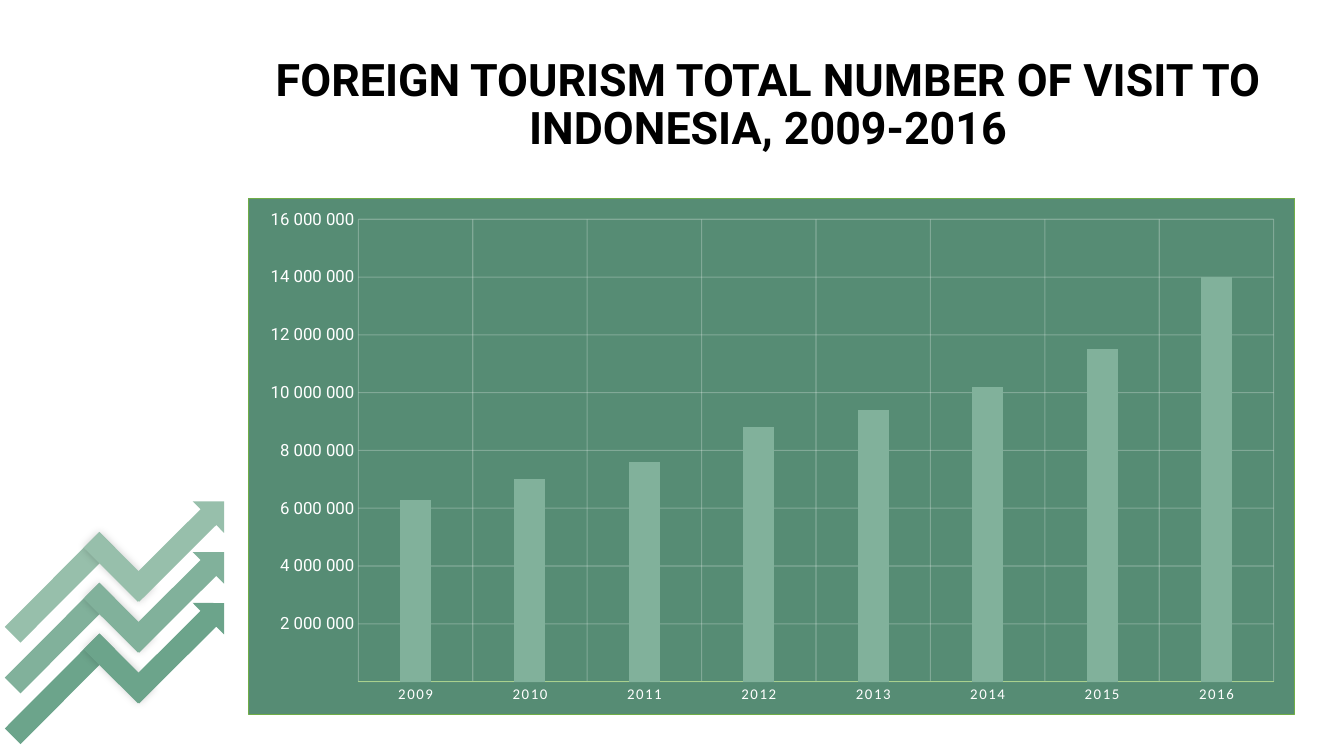
from lxml import etree
from pptx import Presentation
from pptx.chart.data import CategoryChartData
from pptx.dml.color import RGBColor
from pptx.enum.chart import XL_CHART_TYPE as ChartType, XL_TICK_MARK as Tick
from pptx.enum.shapes import MSO_SHAPE as Shape
from pptx.enum.text import MSO_ANCHOR as Anchor, MSO_AUTO_SIZE as AutoSize, PP_ALIGN as Align
from pptx.oxml import parse_xml
from pptx.oxml.ns import nsdecls, qn
from pptx.util import Cm, Pt

VISITS = {"2009": 6300000, "2010": 7000000, "2011": 7600000, "2012": 8800000,
          "2013": 9400000, "2014": 10200000, "2015": 11500000, "2016": 14000000}
ARROW_COLORS = ["6CA48B", "81B19B", "97BFAB"]  # bottom to top
ARROW_STEP = 1.28


def color(value):
    return RGBColor.from_string(value)


def shadow(blur, distance, angle, opacity):
    return parse_xml(
        f'<a:effectLst {nsdecls("a")}><a:outerShdw blurRad="{Pt(blur)}" dist="{Pt(distance)}" '
        f'dir="{angle * 60000}" algn="ctr" rotWithShape="0"><a:srgbClr val="000000">'
        f'<a:alpha val="{opacity * 1000}"/></a:srgbClr></a:outerShdw></a:effectLst>')


class SlideBuilder:
    font = "Roboto"
    panel, border, bar = "568C74", "70AD47", "81B19B"
    light, dark, axis_line = "FFFFFF", "000000", "A9D18E"

    def __init__(self, page):
        self.page = page

    def title(self, text, left, top, width, height):
        box = self.page.shapes.title
        box.left, box.top, box.width, box.height = map(Cm, (left, top, width, height))
        frame = box.text_frame
        frame.text = text
        frame.word_wrap = True
        frame.auto_size = AutoSize.NONE
        frame.vertical_anchor = Anchor.MIDDLE
        para = frame.paragraphs[0]
        para.alignment = Align.CENTER
        para.line_spacing = 0.9
        span = para.runs[0]
        span.font.name, span.font.size, span.font.bold = self.font, Pt(32), True
        span.font.color.rgb = color(self.dark)
        span.font.fill._xPr.find(qn("a:solidFill")).addnext(shadow(4, 3, 45, 40))

    def style_axis(self, axis, font, size):
        axis.major_tick_mark = axis.minor_tick_mark = Tick.NONE
        labels = axis.tick_labels.font
        labels.name, labels.size = font, Pt(size)
        labels.color.rgb = color(self.light)
        axis.has_major_gridlines = True
        line = axis.major_gridlines.format.line
        line.width = Pt(0.75)
        line.color.rgb = color(self.light)
        tint = next(axis.major_gridlines._xAx.iter(qn("c:majorGridlines"))).find(
            ".//" + qn("a:srgbClr"))
        etree.SubElement(tint, qn("a:alpha")).set("val", "25000")

    def column_chart(self, values, left, top, width, height):
        data = CategoryChartData()
        data.categories = list(values)
        data.add_series("Series 1", list(values.values()))
        chart = self.page.shapes.add_chart(
            ChartType.COLUMN_CLUSTERED, *map(Cm, (left, top, width, height)), data).chart
        chart.has_legend = chart.has_title = False
        chart.font.name, chart.font.size = "Calibri", Pt(10)
        chart.font.color.rgb = color(self.dark)

        # Columns
        plot = chart.plots[0]
        plot.gap_width, plot.overlap, plot.vary_by_categories = 269, -20, False
        fill = plot.series[0].format.fill
        fill.solid()
        fill.fore_color.rgb = color(self.bar)

        # Axes
        years, visits = chart.category_axis, chart.value_axis
        self.style_axis(years, "Calibri", 10.6)
        years.tick_labels.font._element.set("spc", "120")
        years.format.line.width = Pt(0.25)
        years.format.line.color.rgb = color(self.axis_line)
        self.style_axis(visits, self.font, 12)
        visits.format.line.fill.background()
        visits.minimum_scale, visits.maximum_scale, visits.major_unit = 0, 16000000, 2000000
        visits.tick_labels.number_format = r"###\ ###\ ###"
        visits.tick_labels.number_format_is_linked = False

        # Panel and plot area
        root = chart._chartSpace.find(qn("c:chart"))
        root.addnext(parse_xml(
            f'<c:spPr {nsdecls("c", "a")}><a:solidFill><a:srgbClr val="{self.panel}"/></a:solidFill>'
            f'<a:ln w="{Pt(0.75)}"><a:solidFill><a:srgbClr val="{self.border}"/></a:solidFill></a:ln>'
            '</c:spPr>'))
        area = root.find(qn("c:plotArea"))
        for layout in area.findall(qn("c:layout")):
            area.remove(layout)
        sizes = {"x": 0.105, "y": 0.041, "w": 0.875, "h": 0.896}
        places = "".join(f'<c:{name} val="{size}"/>' for name, size in sizes.items())
        area.insert(0, parse_xml(
            f'<c:layout {nsdecls("c")}><c:manualLayout><c:layoutTarget val="inner"/>'
            f'<c:xMode val="edge"/><c:yMode val="edge"/>{places}</c:manualLayout></c:layout>'))

    def arrow_part(self, group, kind, fill, left, top, width, height, angle):
        part = group.shapes.add_shape(kind, *map(Cm, (left, top, width, height)))
        part.rotation = angle
        part.shadow.inherit = False
        part.fill.solid()
        part.fill.fore_color.rgb = color(fill)
        part.line.fill.background()
        return part

    def zigzag_arrow(self, group, fill, rise):
        self.arrow_part(group, Shape.RECTANGLE, fill, 1.23, 15.67 - rise, 0.56, 3.38, 44.9)
        elbow = self.arrow_part(group, Shape.RECTANGLE, fill, 2.71, 15.88 - rise, 0.56, 1.93, 134.9)
        effects = elbow._element.spPr.find(qn("a:effectLst"))
        effects.getparent().replace(effects, shadow(6, 0, 225, 20))
        self.arrow_part(group, Shape.DOWN_ARROW, fill, 3.92, 14.71 - rise, 1.12, 3.3, 225.1)


def main():
    deck = Presentation()
    deck.slide_width, deck.slide_height = Cm(33.87), Cm(19.05)
    page = deck.slides.add_slide(deck.slide_layouts[5])
    builder = SlideBuilder(page)

    builder.title("FOREIGN TOURISM TOTAL NUMBER OF VISIT TO INDONESIA, 2009-2016",
                  6.07, 1.02, 26.59, 3.3)
    builder.column_chart(VISITS, 6.25, 4.98, 26.39, 13.03)

    # Rising arrows
    group = page.shapes.add_group_shape()
    for index, fill in enumerate(ARROW_COLORS):
        builder.zigzag_arrow(group, fill, index * ARROW_STEP)

    deck.save("out.pptx")


if __name__ == "__main__":
    main()
